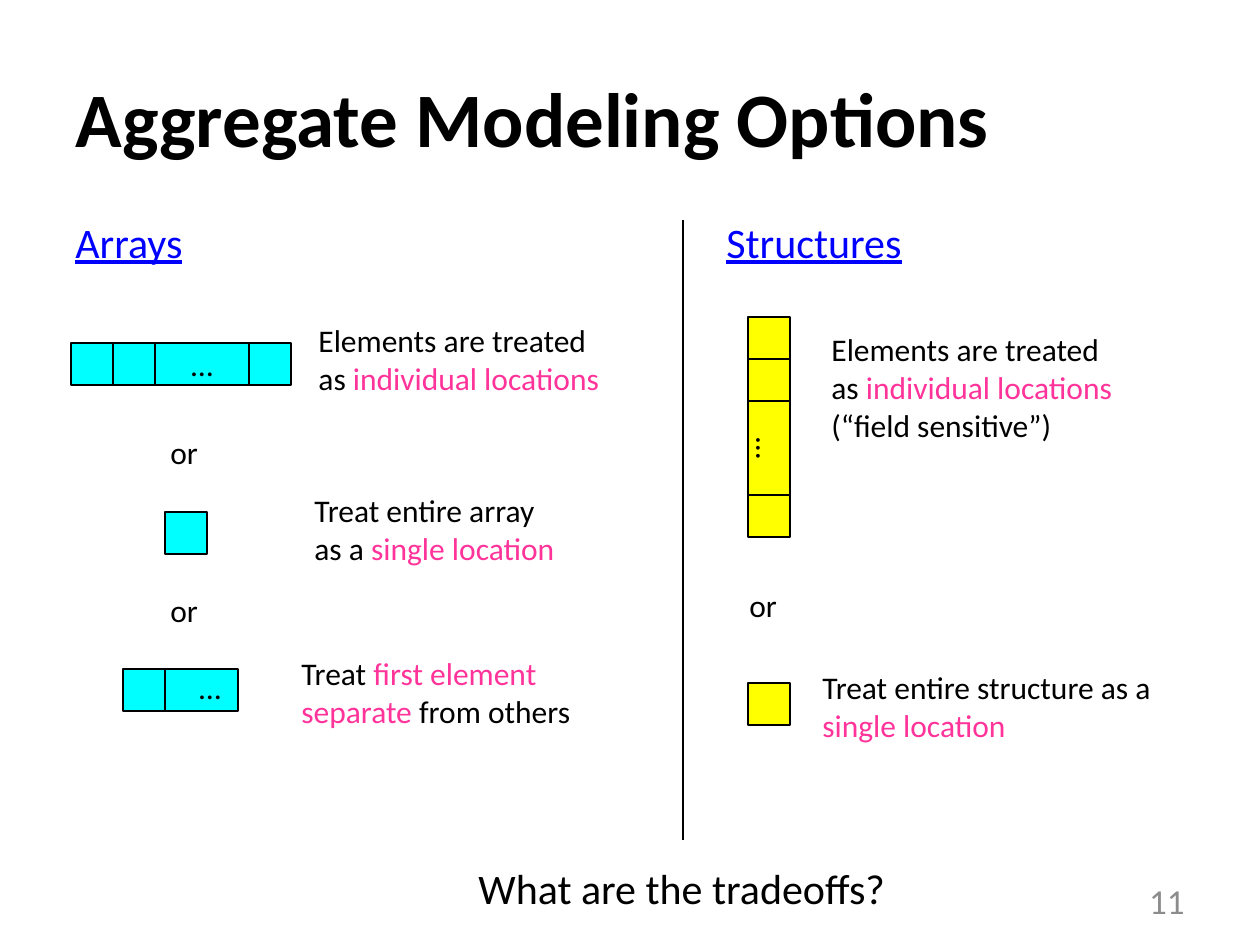
from dataclasses import dataclass

from lxml.etree import SubElement
from pptx import Presentation
from pptx.dml.color import RGBColor
from pptx.enum.shapes import MSO_CONNECTOR, MSO_SHAPE
from pptx.enum.text import MSO_ANCHOR, PP_ALIGN
from pptx.oxml.ns import qn
from pptx.util import Emu, Pt


@dataclass(frozen=True)
class Theme:
    """Colours, type sizes and line widths of the slide."""
    font: str = "Calibri"
    ink: RGBColor = RGBColor(0, 0, 0)
    heading: RGBColor = RGBColor(0, 0, 255)
    accent: RGBColor = RGBColor(0xFF, 0x33, 0x99)
    muted: RGBColor = RGBColor(0x8C, 0x8C, 0x8C)
    array: RGBColor = RGBColor(0, 255, 255)
    structure: RGBColor = RGBColor(255, 255, 0)
    title_size: int = 44
    large_size: int = 24
    number_size: int = 20
    note_size: int = 18
    cell_line: float = 0.75
    divider_line: float = 1.25


THEME = Theme()
CELL = 42
GAP_CELL = 94


def px(length):
    """Turn pixels into EMU."""
    return Emu(round(length * 914400 / 126))


def style(para, size, color, align=PP_ALIGN.LEFT):
    """Set the font and alignment of a paragraph."""
    para.alignment = align
    para.font.name = THEME.font
    para.font.size = Pt(size)
    para.font.color.rgb = color


def add_text(page, box, text, size=THEME.note_size, color=THEME.ink,
             align=PP_ALIGN.LEFT, wrap=False):
    """Add a text box in which every second part between bars is accented."""
    frame = page.shapes.add_textbox(*map(px, box)).text_frame
    frame.word_wrap = wrap
    for index, line in enumerate(text.split("\n")):
        para = frame.paragraphs[0] if index == 0 else frame.add_paragraph()
        style(para, size, color, align)
        for position, part in enumerate(line.split("|")):
            if part:
                span = para.add_run()
                span.text = part
                if position % 2:
                    span.font.color.rgb = THEME.accent
    return frame


def add_cell(page, box, fill, text="", rotation=0):
    """Add one memory cell, optionally rotated about its centre."""
    cell = page.shapes.add_shape(MSO_SHAPE.RECTANGLE, *map(px, box))
    cell.rotation = rotation
    cell.shadow.inherit = False
    cell.fill.solid()
    cell.fill.fore_color.rgb = fill
    cell.line.color.rgb = THEME.ink
    cell.line.width = Pt(THEME.cell_line)
    if text:
        frame = cell.text_frame
        frame.word_wrap = False
        frame.vertical_anchor = MSO_ANCHOR.MIDDLE
        frame.text = text
        style(frame.paragraphs[0], THEME.note_size, THEME.ink, PP_ALIGN.CENTER)


def add_cells(page, left, top, lengths, fill, vertical=False, texts=()):
    """Add touching cells along a row or down a column."""
    for index, length in enumerate(lengths):
        text = texts[index] if texts else ""
        if vertical:
            shift = (length - CELL) / 2
            add_cell(page, (left - shift, top + shift, length, CELL), fill, text, 90)
            top += length
        else:
            add_cell(page, (left, top, length, CELL), fill, text)
            left += length


def add_heading(page, box, text):
    """Add the underlined heading of a panel."""
    frame = add_text(page, box, text, THEME.large_size, THEME.heading, wrap=True)
    frame.paragraphs[0].font.underline = True


def add_arrays(page, box):
    """Fill the panel of array options."""
    left, top, width, height = box
    add_heading(page, box, "Arrays")
    add_cells(page, left + 8, top + 133, (CELL, CELL, GAP_CELL, CELL),
              THEME.array, texts=("", "", "…", ""))
    add_cells(page, left + 102, top + 302, (CELL,), THEME.array)
    add_cells(page, left + 60, top + 459, (CELL, 73), THEME.array)
    add_text(page, (left + 123, top + 452, 48, 50), "…", align=PP_ALIGN.CENTER)
    for offset in (217, 375):
        add_text(page, (left + 95, top + offset, 53, 50), "or")
    notes = (
        (243, 105, 310, "Elements are treated\nas |individual locations"),
        (239, 275, 268, "Treat entire array\nas a |single location"),
        (226, 438, 300, "Treat |first element\n|separate| from others"),
    )
    for x, y, note_width, text in notes:
        add_text(page, (left + x, top + y, note_width, 89), text)


def add_structures(page, box):
    """Fill the panel of structure options."""
    left, top, width, height = box
    add_heading(page, box, "Structures")
    add_cells(page, left + 34, top + 107, (CELL, CELL, GAP_CELL, CELL),
              THEME.structure, vertical=True, texts=("", "", "…", ""))
    add_cells(page, left + 34, top + 473, (CELL,), THEME.structure)
    add_text(page, (left + 23, top + 370, 53, 50), "or")
    add_text(page, (left + 105, top + 114, 310, 127),
             "Elements are treated\nas |individual locations|\n(“field sensitive”)")
    add_text(page, (left + 96, top + 452, 367, 89),
             "Treat entire structure as a |single location", wrap=True)


def add_divider(page, left, top, height):
    """Add the vertical line between the panels."""
    line = page.shapes.add_connector(
        MSO_CONNECTOR.STRAIGHT, px(left), px(top), px(left), px(top + height))
    line.line.color.rgb = THEME.ink
    line.line.width = Pt(THEME.divider_line)
    SubElement(line._element.spPr, qn("a:effectLst"))


def add_title(page, box, text):
    """Place and format the title placeholder."""
    title = page.shapes.title
    title.left, title.top, title.width, title.height = map(px, box)
    title.text_frame.text = text
    title.text_frame.vertical_anchor = MSO_ANCHOR.MIDDLE
    para = title.text_frame.paragraphs[0]
    style(para, THEME.title_size, THEME.ink)
    para.font.bold = True


def add_footer(page, box):
    """Add the closing question and the page number."""
    left, top, width, height = box
    add_text(page, (left, top, 437, 63), "What are the tradeoffs?", THEME.large_size)
    number = add_text(page, (left + 437, top + 20, width - 437, 50), "11",
                      THEME.number_size, THEME.muted, PP_ALIGN.RIGHT, True)
    number.vertical_anchor = MSO_ANCHOR.MIDDLE


def main():
    """Build and save the slide."""
    deck = Presentation()
    deck.slide_width, deck.slide_height = px(1260), px(945)
    page = deck.slides.add_slide(deck.slide_layouts[5])
    add_title(page, (63, 38, 1134, 158), "Aggregate Modeling Options")
    add_arrays(page, (63, 210, 504, 672))
    add_structures(page, (714, 210, 504, 672))
    add_divider(page, 683, 220, 620)
    add_footer(page, (466, 856, 731, 70))
    deck.save("out.pptx")


if __name__ == "__main__":
    main()
